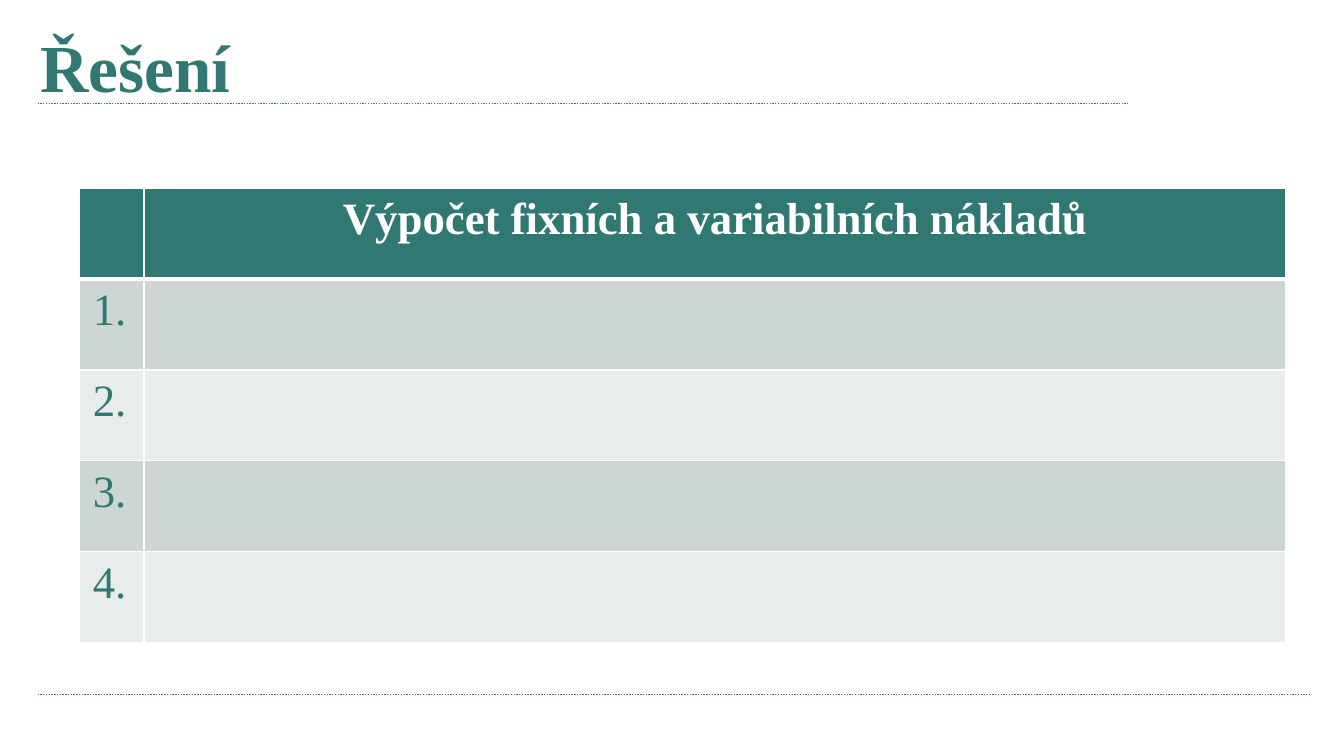
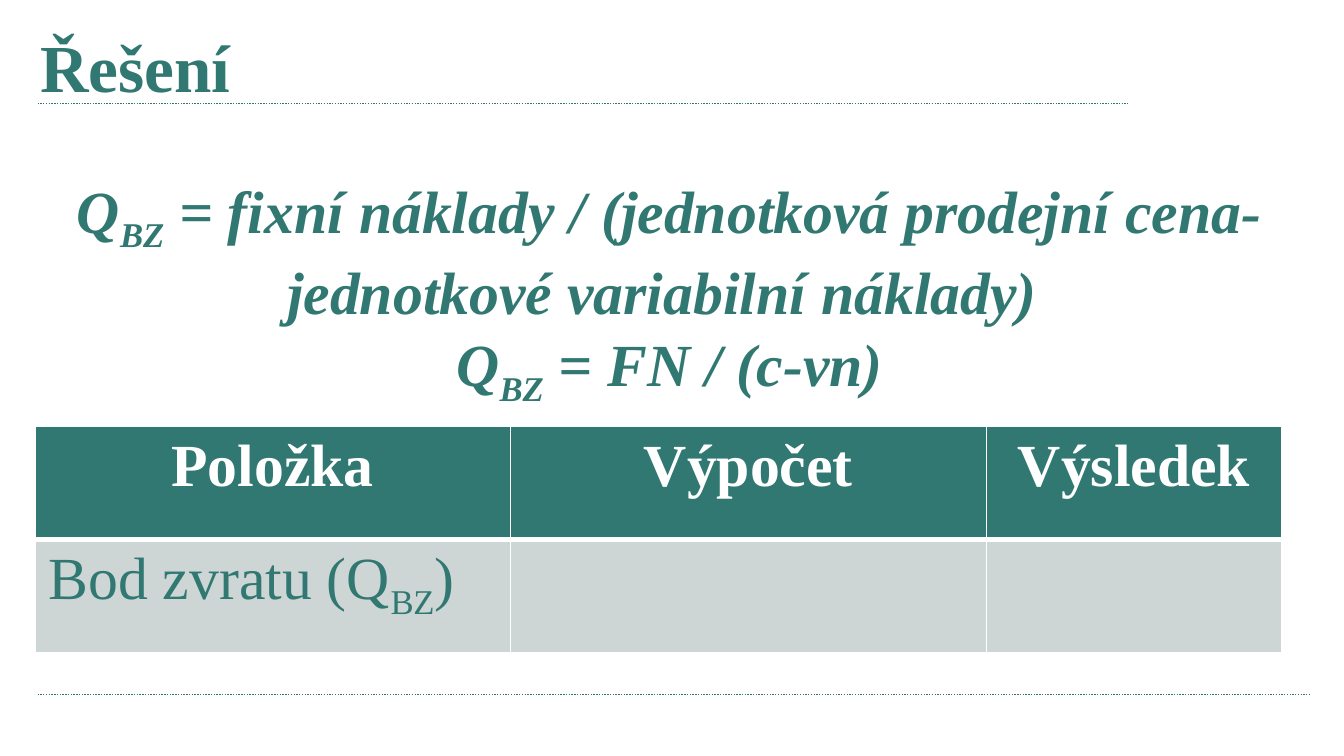
from pptx import Presentation
from pptx.dml.color import RGBColor
from pptx.enum.dml import MSO_LINE
from pptx.enum.shapes import MSO_CONNECTOR
from pptx.enum.text import MSO_ANCHOR, PP_ALIGN
from pptx.oxml.ns import qn
from pptx.util import Inches, Pt
from lxml import etree

LEFT, CENTER = PP_ALIGN.LEFT, PP_ALIGN.CENTER
TOP = MSO_ANCHOR.TOP
STRAIGHT, DOTTED = MSO_CONNECTOR.STRAIGHT, MSO_LINE.ROUND_DOT

TEAL = RGBColor(0x30, 0x78, 0x71)
WHITE = RGBColor(0xFF, 0xFF, 0xFF)
BANDS = [RGBColor(0xCD, 0xD6, 0xD5), RGBColor(0xE8, 0xEC, 0xEB)]
FONT = "Times New Roman"
TITLE_ONLY = 5

# Content: a text is a list of paragraphs, a paragraph a list of spans;
# a span given as a one-item tuple is a subscript
TITLE = "Řešení"
RULES = [(0.28, 8.39, 0.77), (0.28, 9.75, 5.17)]  # start, end, height on page
COST_ROWS = [["", [["Výpočet fixních a variabilních nákladů"]]]]
COST_ROWS += [[[[f"{number}."]], ""] for number in range(1, 5)]
FORMULAS = [
    ["Q", ("BZ",), " = fixní náklady / (jednotková prodejní cena-"
                   "jednotkové variabilní náklady) "],
    ["Q", ("BZ",), " = FN / (c-vn)"],
]
BREAK_EVEN_ROWS = [
    [[["Položka"]], [["Výpočet"]], [["Výsledek"]]],
    [[["Bod zvratu (Q", ("BZ",), ")"]], "", ""],
]


def write(frame, paragraphs, size, color=TEAL, bold=False, italic=False,
          align=LEFT):
    frame.word_wrap = True
    frame.vertical_anchor = TOP
    for index, spans in enumerate(paragraphs):
        para = frame.add_paragraph() if index else frame.paragraphs[0]
        para.alignment = align
        for part in spans:
            subscript = isinstance(part, tuple)
            span = para.add_run()
            span.text = part[0] if subscript else part
            font = span.font
            font.name, font.size, font.color.rgb = FONT, Pt(size), color
            font.bold, font.italic = bold, italic
            if subscript:
                span._r.get_or_add_rPr().set("baseline", "-25000")


def set_borders(cell, **widths):
    properties = cell._tc.get_or_add_tcPr()
    for side in "LRTB":
        line = etree.SubElement(properties, qn(f"a:ln{side}"),
                                w=str(Pt(widths.get(side, 1))))
        fill = etree.SubElement(line, qn("a:solidFill"))
        etree.SubElement(fill, qn("a:srgbClr"), val=str(WHITE))


def add_grid(page, rows, left, top, column_widths, height, size):
    table = page.shapes.add_table(
        len(rows), len(column_widths), Inches(left), Inches(top),
        Inches(sum(column_widths)), Inches(height)).table
    for column, width in zip(table.columns, column_widths):
        column.width = Inches(width)
    for r, texts in enumerate(rows):
        table.rows[r].height = Inches(height / len(rows))
        header = r == 0
        for c, text in enumerate(texts):
            cell = table.cell(r, c)
            # A thick line parts the header from the rows below
            set_borders(cell, T=3 if r == 1 else 1, B=3 if header else 1)
            cell.fill.solid()
            cell.fill.fore_color.rgb = TEAL if header else BANDS[(r - 1) % 2]
            if text:
                write(cell.text_frame, text, size, bold=header,
                      color=WHITE if header else TEAL,
                      align=CENTER if header else LEFT)


def add_rules(layout, page):
    # Draw the dotted rules once, then move them into the shared layout
    for start, end, height in RULES:
        rule = page.shapes.add_connector(STRAIGHT, Inches(start), Inches(height),
                                         Inches(end), Inches(height))
        rule.line.color.rgb = TEAL
        rule.line.width = Pt(0.75)
        rule.line.dash_style = DOTTED
        etree.SubElement(rule.element.spPr, qn("a:effectLst"))
        layout.shapes.element.append(rule.element)


def add_page(deck, layout):
    page = deck.slides.add_slide(layout)
    title = page.shapes.title
    title.left, title.top = Inches(0.2), Inches(0.14)
    title.width, title.height = Inches(8.82), Inches(0.79)
    write(title.text_frame, [[TITLE]], 36, bold=True)
    return page


def main():
    deck = Presentation()
    # Widescreen, 16:9
    deck.slide_width, deck.slide_height = Inches(10), Inches(10 * 9 / 16)
    layout = deck.slide_layouts[TITLE_ONLY]

    # Fixed and variable costs
    costs = add_page(deck, layout)
    add_rules(layout, costs)
    add_grid(costs, COST_ROWS, 0.59, 1.4, [0.48, 8.5], 3.38, 24)

    # Break-even point
    break_even = add_page(deck, layout)
    box = break_even.shapes.add_textbox(Inches(0.42), Inches(1.24),
                                        Inches(9.13), Inches(1.88))
    write(box.text_frame, FORMULAS, 32, bold=True, italic=True, align=CENTER)
    add_grid(break_even, BREAK_EVEN_ROWS, 0.26, 3.17, [3.54, 3.54, 2.2], 1.69, 32)

    deck.save("out.pptx")


if __name__ == "__main__":
    main()
